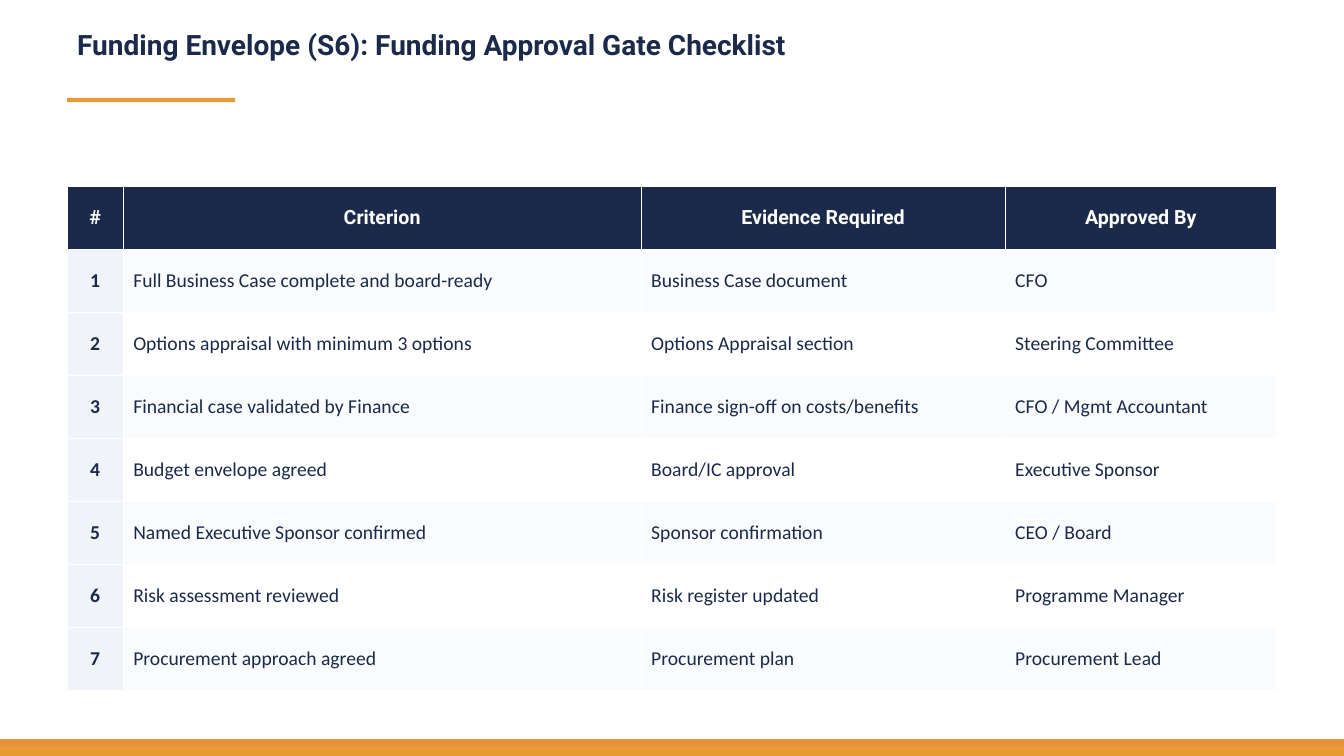
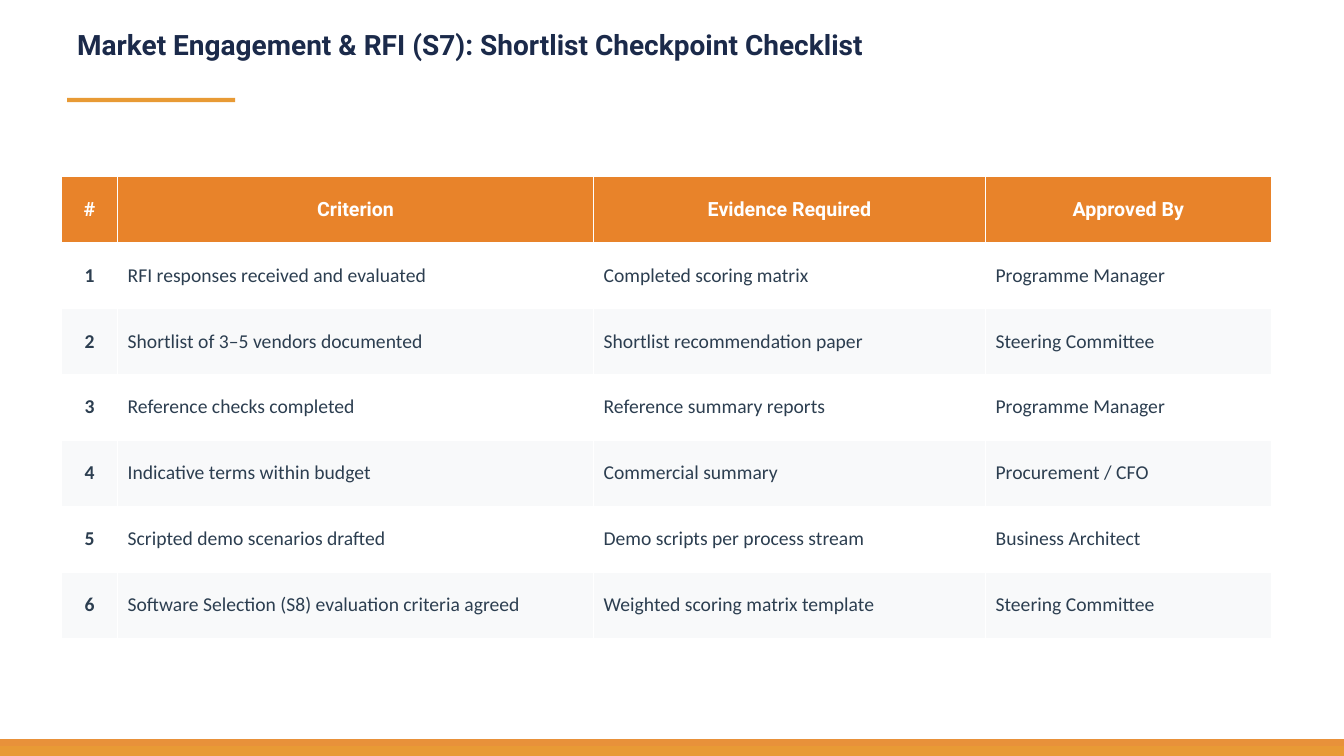
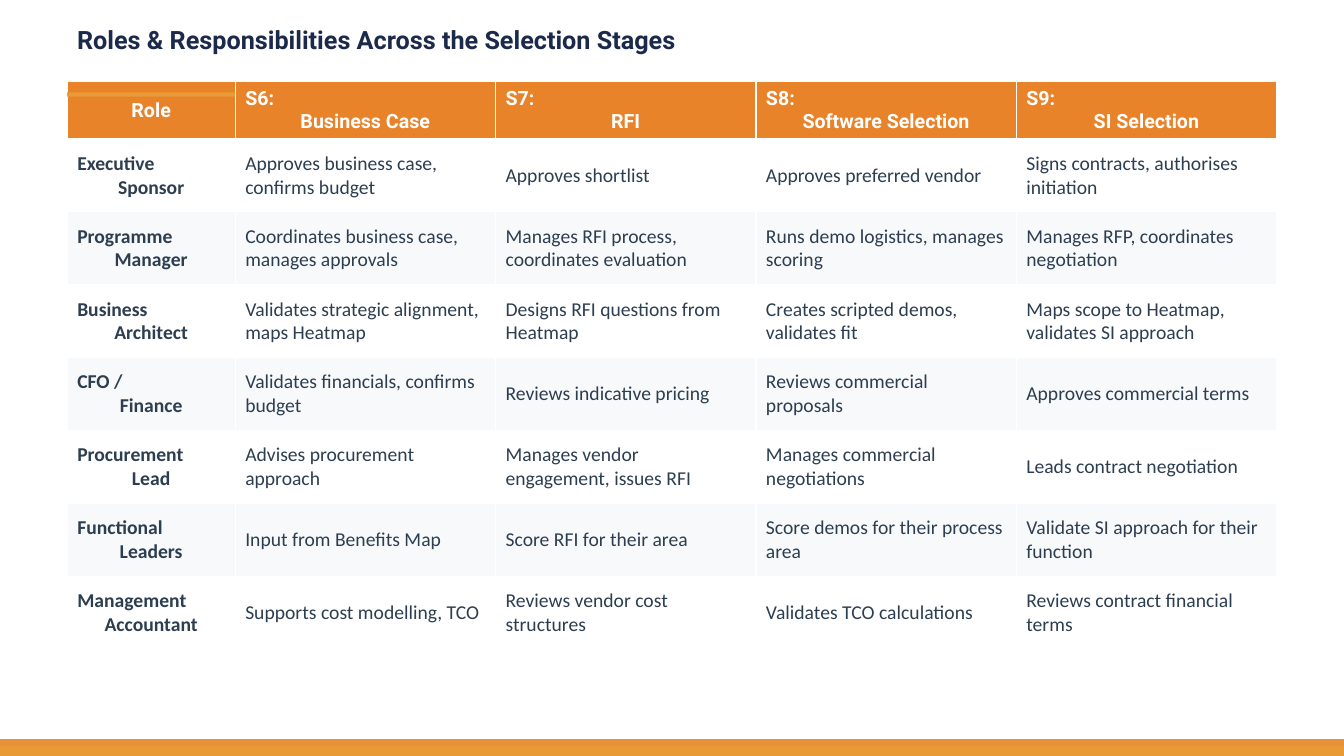
import dataclasses

import pptx
import pptx.dml.color
import pptx.enum.shapes
import pptx.enum.text
import pptx.util

Pt = pptx.util.Pt
ALIGN = pptx.enum.text.PP_ALIGN


@dataclasses.dataclass(frozen=True)
class Theme:
    navy: str = "1B2A4A"
    slate: str = "2C3E50"
    orange: str = "E8832A"
    band: str = "E8913A"
    accent: str = "E89A35"
    white: str = "FFFFFF"
    head_font: str = "Roboto"
    body_font: str = "Calibri"
    table_size: int = 14


T = Theme()

# Table looks: header fill, text colour, fills of odd and even rows, key column fill
NAVY_LOOK = dict(head=T.navy, text=T.navy, rows=("FAFBFC", T.white), key="F0F3F7")
ORANGE_LOOK = dict(head=T.orange, text=T.slate, rows=(T.white, "F8F9FA"), key=None)


def rgb(value):
    return pptx.dml.color.RGBColor.from_string(value)


def add_run(p, text, color, **fmt):
    r = p.add_run()
    r.text = text
    r.font.color.rgb = rgb(color)
    for name, value in fmt.items():
        setattr(r.font, name, value)


def add_bar(s, box, color):
    sp = s.shapes.add_shape(pptx.enum.shapes.MSO_SHAPE.RECTANGLE, *map(Pt, box))
    sp.shadow.inherit = False
    sp.fill.solid()
    sp.fill.fore_color.rgb = rgb(color)
    sp.line.fill.background()


def add_title(s, box, text, size):
    tf = s.shapes.add_textbox(*map(Pt, box)).text_frame
    tf.word_wrap = True
    add_run(tf.paragraphs[0], text, T.navy, name=T.head_font, size=Pt(size), bold=True)


def fill_cell(cell, text, fill, color, centred, **fmt):
    cell.fill.solid()
    cell.fill.fore_color.rgb = rgb(fill)
    cell.vertical_anchor = pptx.enum.text.MSO_ANCHOR.MIDDLE
    tf = cell.text_frame
    lines = text.split("\n")
    for i, line in enumerate(lines):
        p = tf.add_paragraph() if i else tf.paragraphs[0]
        # In a two-line label only the last line is centred
        last = i == len(lines) - 1
        p.alignment = ALIGN.CENTER if centred and last else ALIGN.LEFT
        add_run(p, line, color, size=Pt(T.table_size), **fmt)


def add_grid(s, left, top, widths, head_height, row_height, look, header, rows):
    height = head_height + row_height * len(rows)
    table = s.shapes.add_table(len(rows) + 1, len(widths), Pt(left), Pt(top),
                               Pt(sum(widths)), Pt(height)).table
    for col, width in zip(table.columns, widths):
        col.width = Pt(width)
    for i, row in enumerate(table.rows):
        row.height = Pt(row_height if i else head_height)
    # Header row
    for c, text in enumerate(header):
        fill_cell(table.cell(0, c), text, look["head"], T.white, True,
                  name=T.head_font, bold=True)
    # Body rows, with a bold key column
    for i, row in enumerate(rows):
        fill = look["rows"][i % 2]
        for c, text in enumerate(row):
            is_key = c == 0
            fill_cell(table.cell(i + 1, c), text, is_key and look["key"] or fill,
                      look["text"], is_key, name=T.body_font, bold=is_key)


def table_slide(prs, title, title_box, title_size, rule_top, grid):
    s = prs.slides.add_slide(prs.slide_layouts[6])
    add_bar(s, (0, 528, 960, 12), T.band)
    add_title(s, title_box, title, title_size)
    add_grid(s, **grid)
    # Title rule and footer strip lie over the table
    add_bar(s, (48, rule_top, 120, 3), T.accent)
    add_bar(s, (0, 533, 960, 7), T.accent)


def checklist_slide(prs, title, criteria, **grid):
    grid["header"] = ["#", "Criterion", "Evidence Required", "Approved By"]
    grid["rows"] = [(str(n), *row) for n, row in enumerate(criteria, 1)]
    table_slide(prs, title, (48, 16, 860, 42), 20, 70, grid)


def roles_slide(prs, title, **grid):
    table_slide(prs, title, (48, 14, 860, 40), 18, 66, grid)


FUNDING = [
    ("Full Business Case complete and board-ready", "Business Case document", "CFO"),
    ("Options appraisal with minimum 3 options", "Options Appraisal section",
     "Steering Committee"),
    ("Financial case validated by Finance", "Finance sign-off on costs/benefits",
     "CFO / Mgmt Accountant"),
    ("Budget envelope agreed", "Board/IC approval", "Executive Sponsor"),
    ("Named Executive Sponsor confirmed", "Sponsor confirmation", "CEO / Board"),
    ("Risk assessment reviewed", "Risk register updated", "Programme Manager"),
    ("Procurement approach agreed", "Procurement plan", "Procurement Lead"),
]

SHORTLIST = [
    ("RFI responses received and evaluated", "Completed scoring matrix",
     "Programme Manager"),
    ("Shortlist of 3–5 vendors documented", "Shortlist recommendation paper",
     "Steering Committee"),
    ("Reference checks completed", "Reference summary reports", "Programme Manager"),
    ("Indicative terms within budget", "Commercial summary", "Procurement / CFO"),
    ("Scripted demo scenarios drafted", "Demo scripts per process stream",
     "Business Architect"),
    ("Software Selection (S8) evaluation criteria agreed",
     "Weighted scoring matrix template", "Steering Committee"),
]

STAGES = ["Role", "S6:\nBusiness Case", "S7:\nRFI", "S8:\nSoftware Selection",
          "S9:\nSI Selection"]

ROLES = [
    ("Executive\nSponsor", "Approves business case, confirms budget",
     "Approves shortlist", "Approves preferred vendor",
     "Signs contracts, authorises initiation"),
    ("Programme\nManager", "Coordinates business case, manages approvals",
     "Manages RFI process, coordinates evaluation",
     "Runs demo logistics, manages scoring", "Manages RFP, coordinates negotiation"),
    ("Business\nArchitect", "Validates strategic alignment, maps Heatmap",
     "Designs RFI questions from Heatmap", "Creates scripted demos, validates fit",
     "Maps scope to Heatmap, validates SI approach"),
    ("CFO /\nFinance", "Validates financials, confirms budget",
     "Reviews indicative pricing", "Reviews commercial proposals",
     "Approves commercial terms"),
    ("Procurement\nLead", "Advises procurement approach",
     "Manages vendor engagement, issues RFI", "Manages commercial negotiations",
     "Leads contract negotiation"),
    ("Functional\nLeaders", "Input from Benefits Map", "Score RFI for their area",
     "Score demos for their process area", "Validate SI approach for their function"),
    ("Management\nAccountant", "Supports cost modelling, TCO",
     "Reviews vendor cost structures", "Validates TCO calculations",
     "Reviews contract financial terms"),
]


def main():
    prs = pptx.Presentation()
    prs.slide_width, prs.slide_height = Pt(960), Pt(540)
    checklist_slide(prs, "Funding Envelope (S6): Funding Approval Gate Checklist",
                    FUNDING, left=48, top=133.2, widths=[40, 370, 260, 194],
                    head_height=45, row_height=45, look=NAVY_LOOK)
    checklist_slide(prs, "Market Engagement & RFI (S7): Shortlist Checkpoint Checklist",
                    SHORTLIST, left=44, top=126, widths=[40, 340, 280, 204],
                    head_height=47.14, row_height=47.14, look=ORANGE_LOOK)
    roles_slide(prs, "Roles & Responsibilities Across the Selection Stages",
                left=48, top=58.4, widths=[120] + [186] * 4, head_height=38.4,
                row_height=52.1, look=ORANGE_LOOK, header=STAGES, rows=ROLES)
    prs.save("out.pptx")


if __name__ == "__main__":
    main()
